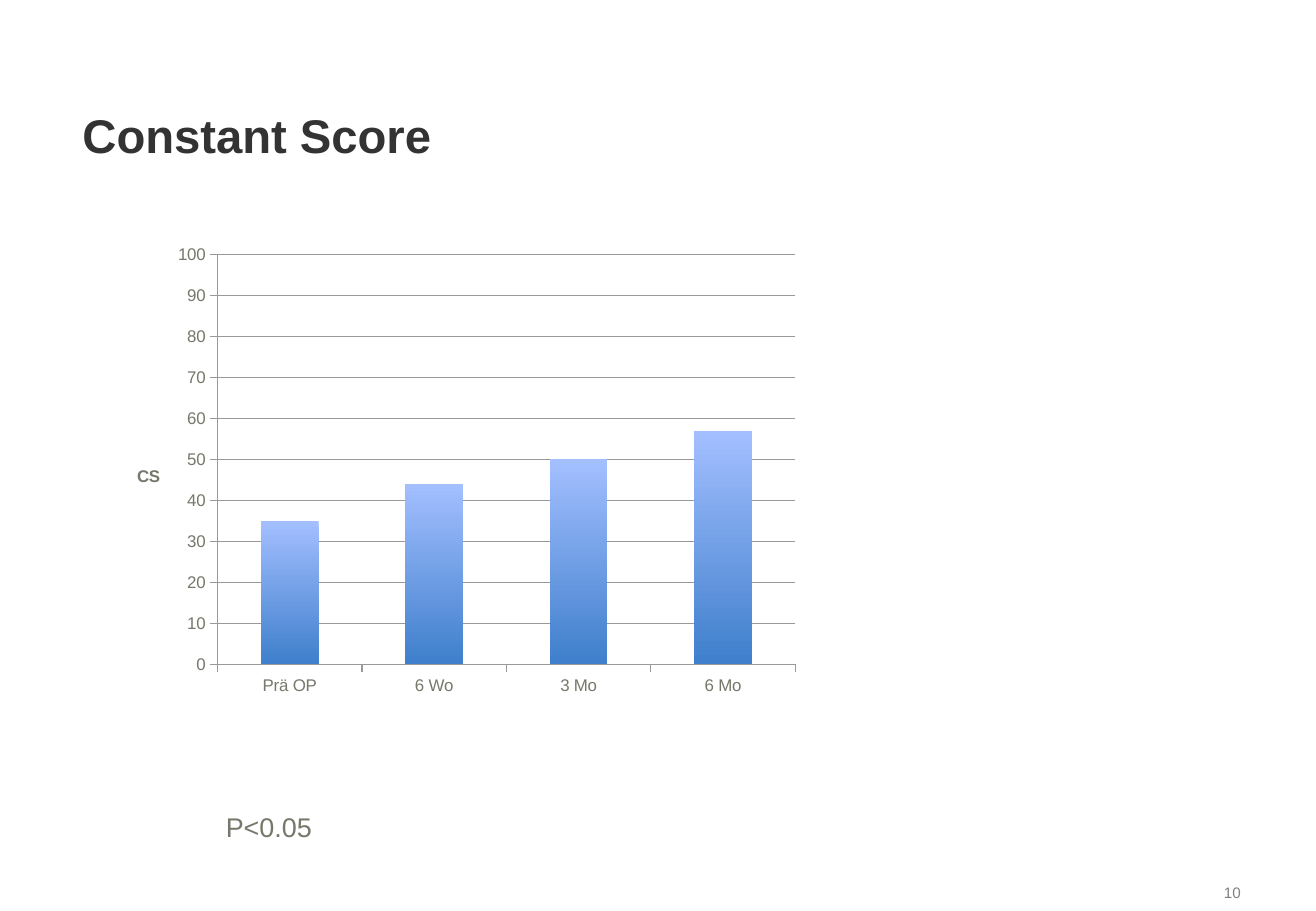
"""Build the Constant Score slide with its column chart."""
from lxml import etree
from pptx import Presentation
from pptx import util as u
from pptx.chart.data import CategoryChartData
from pptx.dml.color import RGBColor
from pptx.enum import chart as charts, text
from pptx.oxml import parse_xml
from pptx.oxml.ns import nsdecls

COLORS = {"title": "333333", "text": "75786A", "number": "808080",
          "line": "999999", "bar_top": "A3BFFF", "bar_bottom": "3F7FCC"}
FONT = "Arial"
WIDTH, HEIGHT = u.Inches(10.83), u.Inches(7.5)

presentation = Presentation()
presentation.slide_width, presentation.slide_height = WIDTH, HEIGHT
slide = presentation.slides.add_slide(presentation.slide_layouts[6])


def add_text(words, left, top, width, height, size, color, bold=False, wrap=True,
             align=text.PP_ALIGN.LEFT, anchor=text.MSO_ANCHOR.TOP):
    shape = slide.shapes.add_textbox(
        int(WIDTH * left), int(HEIGHT * top), int(WIDTH * width), int(HEIGHT * height))
    frame = shape.text_frame
    frame.word_wrap, frame.vertical_anchor = wrap, anchor
    paragraph = frame.paragraphs[0]
    paragraph.alignment = align
    run = paragraph.add_run()
    run.text = words
    run.font.name, run.font.size, run.font.bold = FONT, u.Pt(size), bold
    run.font.color.rgb = RGBColor.from_string(COLORS[color])
    return shape


def manual_layout(**places):
    parts = "".join(f'<c:{name} val="{value}"/>' for name, value in places.items())
    return parse_xml(f'<c:layout {nsdecls("c")}><c:manualLayout>{parts}</c:manualLayout></c:layout>')


add_text("Constant Score", 0.0536, 0.1, 0.593, 0.095, size=28, color="title", bold=True,
         anchor=text.MSO_ANCHOR.MIDDLE)
add_text("10", 0.7765, 0.963, 0.1754, 0.069, size=9, color="number", align=text.PP_ALIGN.RIGHT)

scores = CategoryChartData()
scores.categories = ["Prä OP", "6 Wo", "3 Mo", "6 Mo"]
scores.add_series("Series 1", [35, 44, 50, 57])
chart = slide.shapes.add_chart(
    charts.XL_CHART_TYPE.COLUMN_CLUSTERED, int(WIDTH * 0.0859), int(HEIGHT * 0.2587),
    int(WIDTH * 0.529), int(HEIGHT * 0.5173), scores).chart
chart.has_legend = chart.has_title = False
chart.font.name, chart.font.size = FONT, u.Pt(10)
chart.font.color.rgb = RGBColor.from_string(COLORS["text"])

plot = chart.plots[0]
plot.gap_width, plot.vary_by_categories = 150, False
fill = plot.series[0].format.fill
fill.gradient()
fill.gradient_angle = 270
for stop, name in zip(fill.gradient_stops, ("bar_top", "bar_bottom")):
    stop.color.rgb = RGBColor.from_string(COLORS[name])

value_axis = chart.value_axis
value_axis.minimum_scale, value_axis.maximum_scale, value_axis.major_unit = 0, 100, 10
value_axis.has_major_gridlines = True
for axis in (chart.category_axis, value_axis):
    axis.major_tick_mark = charts.XL_TICK_MARK.OUTSIDE
for part in (chart.category_axis, value_axis, value_axis.major_gridlines):
    part.format.line.width = u.Pt(0.75)
    part.format.line.color.rgb = RGBColor.from_string(COLORS["line"])

axis_title = value_axis.axis_title
axis_title.text_frame.text = "CS"
title_font = axis_title.text_frame.paragraphs[0].runs[0].font
title_font.name, title_font.size, title_font.bold = FONT, u.Pt(10), True
title_font.color.rgb = RGBColor.from_string(COLORS["text"])
body = axis_title.text_frame._txBody.bodyPr
body.set("rot", "0")
body.set("vert", "horz")

title_layout = manual_layout(xMode="edge", yMode="edge", x=0.03, y=0.48)
plot_layout = manual_layout(layoutTarget="inner", xMode="edge", yMode="edge",
                            x=0.15, y=0.04, w=0.83, h=0.87)
for element, layout, position in ((axis_title._element, title_layout, 1),
                                  (chart._chartSpace.chart.plotArea, plot_layout, 0)):
    for old in element.findall(etree.QName(layout).text):
        element.remove(old)
    element.insert(position, layout)

note = add_text("P<0.05", 0.1625, 0.8827, 0.085, 0.0493, size=16, color="text", wrap=False)
note.text_frame.auto_size = text.MSO_AUTO_SIZE.SHAPE_TO_FIT_TEXT

presentation.save("out.pptx")
